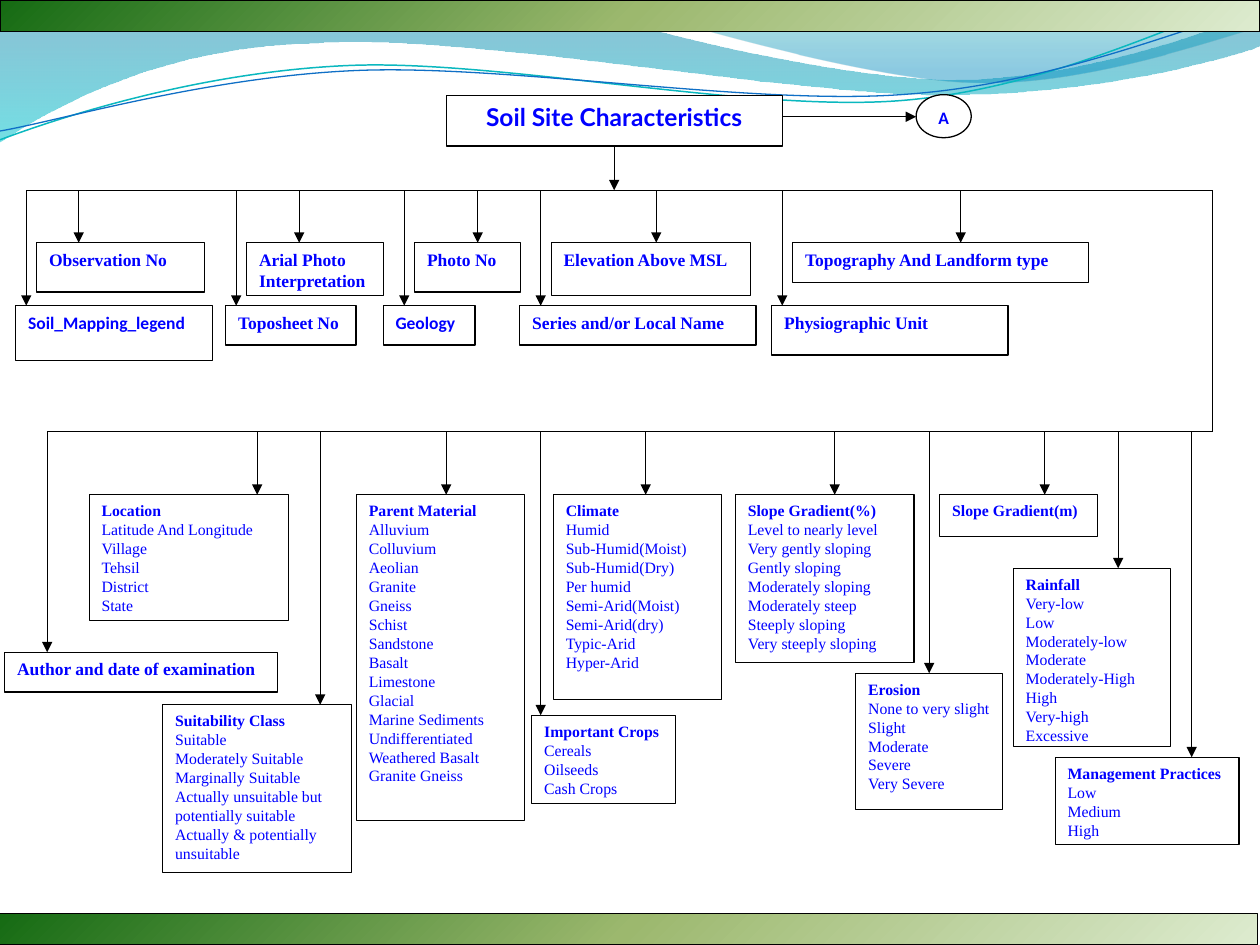
import math
from dataclasses import dataclass

import pptx
import pptx.dml.color
import pptx.enum.shapes
import pptx.enum.text
import pptx.oxml
import pptx.oxml.ns
import pptx.util
from lxml import etree

COLORS = {"text": "0000FF", "line": "000000", "box": "FFFFFF"}
SERIF, SANS = "Times New Roman", "Calibri"
COLUMNS, ROWS = 240, 180
WIDTH, HEIGHT = pptx.util.Inches(10), pptx.util.Inches(7.5)
TOP_OFFSET = pptx.util.Inches(0.01)
UPPER_BUS, LOWER_BUS, BUS_RIGHT = 36, 82, 231
UNITS_PER_INCH = 10000


@dataclass
class Box:
    col: float
    row: float
    cols: float
    rows: float
    arrow_col: float
    text: str
    size: float = 10
    font: str = SERIF


@dataclass
class Wave:
    start: tuple
    segments: list
    stops: list | None = None
    line: str | None = None
    width: float = 0.75
    rotation: float = 0
    center: tuple = (0, 0)


WAVES = [
    Wave((0, 0), [[(4.4, -0.01)],
                  [(4.76, 0.17), (6.64, 0.63), (7.58, 0.63)],
                  [(8.53, 0.63), (9.58, 0.26), (10, 0.09)],
                  [(10.01, 0.36)],
                  [(9.83, 0.44), (8.7, 0.76), (7.46, 0.75)],
                  [(6.22, 0.75), (3.82, 0.28), (2.57, 0.34)],
                  [(1.29, 0.36), (0.46, 0.83), (-0.01, 1.13)],
                  [(0, 0)]],
         [(0, "0074A1", 45), (100, "00C6CF", 55)]),
    Wave((4.79, -0.01), [[(5.09, 0.11), (6.82, 0.62), (7.69, 0.65)],
                         [(8.56, 0.69), (9.61, 0.32), (10, 0.21)],
                         [(10, 0)], [(4.79, -0.01)]],
         [(0, "00A1A9", 30), (80, "008BBF", 45)]),
    Wave((0, 1.11), [[(0.48, 0.93), (1.58, 0.57), (2.77, 0.52)],
                     [(3.95, 0.47), (5.93, 0.89), (7.13, 0.8)],
                     [(8.33, 0.71), (9.38, 0.15), (9.98, -0.02)]],
         line="0AB8BF", width=0.85, rotation=357.3, center=(4.99, 0.58)),
    Wave((0, 1.04), [[(0.47, 0.96), (1.64, 0.61), (2.83, 0.56)],
                     [(4.03, 0.51), (5.97, 0.84), (7.17, 0.75)],
                     [(8.36, 0.67), (9.41, 0.21), (10, 0.06)]],
         line="0F6FC6", rotation=357.3, center=(5, 0.59)),
]

BOXES = [
    Box(7, 46, 32, 9.4, 15, "Observation No"),
    Box(47, 46, 26, 10, 57, "Arial Photo Interpretation"),
    Box(79, 46, 20.2, 9.4, 91, "Photo No"),
    Box(105, 46, 38, 10, 125, "Elevation Above MSL"),
    Box(151, 46, 56.4, 7.6, 183, "Topography And Landform type"),
    Box(3, 58, 37.5, 10.4, 5, "Soil_Mapping_legend", font=SANS),
    Box(43, 58, 24.8, 7.5, 45, "Toposheet No"),
    Box(73, 58, 17.5, 7.5, 77, "Geology", font=SANS),
    Box(99, 58, 45, 7.5, 103, "Series and/or Local Name"),
    Box(147, 58, 45, 9.4, 149, "Physiographic Unit"),
    Box(0.9, 124, 52, 7.6, 9, "Author and date of examination"),
    Box(17, 94, 38, 24, 49,
        "Location\nLatitude And Longitude\nVillage\nTehsil\nDistrict\nState", 9),
    Box(31, 134, 36, 32, 61,
        "Suitability Class\nSuitable\nModerately Suitable\nMarginally Suitable\n"
        "Actually unsuitable but potentially suitable\n"
        "Actually & potentially unsuitable", 9),
    Box(67.9, 94, 32, 62, 85,
        "Parent Material\nAlluvium\nColluvium\nAeolian\nGranite\nGneiss\nSchist\n"
        "Sandstone\nBasalt\nLimestone\nGlacial\nMarine Sediments\n"
        "Undifferentiated\nWeathered Basalt\nGranite Gneiss", 9),
    Box(105.4, 94, 32, 39, 123,
        "Climate\nHumid\nSub-Humid(Moist)\nSub-Humid(Dry)\nPer humid\n"
        "Semi-Arid(Moist)\nSemi-Arid(dry)\nTypic-Arid\nHyper-Arid", 9),
    Box(101.3, 136, 27.4, 16.8, 103,
        "Important Crops\nCereals\nOilseeds\nCash Crops", 9),
    Box(140.1, 94, 34, 32, 159,
        "Slope Gradient(%)\nLevel to nearly level\nVery gently sloping\n"
        "Gently sloping\nModerately sloping\nModerately steep\n"
        "Steeply sloping\nVery steeply sloping", 9),
    Box(163, 128, 28, 26, 177,
        "Erosion\nNone to very slight\nSlight\nModerate\nSevere\nVery Severe", 9),
    Box(179, 94, 30, 8, 199, "Slope Gradient(m)", 9),
    Box(193, 108, 30, 34, 213,
        "Rainfall\nVery-low\nLow\nModerately-low\nModerate\nModerately-High\n"
        "High\nVery-high\nExcessive", 9),
    Box(201, 144, 35, 16.6, 227, "Management Practices\nLow\nMedium\nHigh", 9),
]


def rgb(value: str) -> pptx.dml.color.RGBColor:
    return pptx.dml.color.RGBColor.from_string(value)


def x(col: float) -> int:
    return round(WIDTH * col / COLUMNS)


def y(row: float) -> int:
    return round(HEIGHT * row / ROWS) + TOP_OFFSET


def set_line(sp, color: str = COLORS["line"], width: float = 0.75) -> None:
    sp.line.color.rgb = rgb(color)
    sp.line.width = pptx.util.Pt(width)


def set_gradient(sp, stops: list, direction: str) -> None:
    gs = "".join(
        f'<a:gs pos="{pos * 1000}"><a:srgbClr val="{color}">'
        f'<a:alpha val="{alpha * 1000}"/></a:srgbClr></a:gs>'
        for pos, color, alpha in stops)
    grad = pptx.oxml.parse_xml(
        f'<a:gradFill {pptx.oxml.ns.nsdecls("a")} rotWithShape="1">'
        f'<a:gsLst>{gs}</a:gsLst>{direction}</a:gradFill>')
    geom = next(sp._element.spPr.iter(pptx.oxml.ns.qn("a:custGeom"), pptx.oxml.ns.qn("a:prstGeom")))
    geom.addnext(grad)


def draw_wave(s, wave: Wave) -> None:
    angle = math.radians(-wave.rotation)
    cx, cy = wave.center

    def level(point: tuple) -> tuple:
        dx, dy = point[0] - cx, point[1] - cy
        return (round((cx + dx * math.cos(angle) - dy * math.sin(angle)) * UNITS_PER_INCH),
                round((cy + dx * math.sin(angle) + dy * math.cos(angle)) * UNITS_PER_INCH))

    builder = s.shapes.build_freeform(*level(wave.start), scale=pptx.util.Inches(1) / UNITS_PER_INCH)
    builder.add_line_segments([level(p) for seg in wave.segments for p in seg],
                              close=wave.stops is not None)
    sp = builder.convert_to_shape()
    sp.rotation = wave.rotation
    sp.shadow.inherit = False
    steps = iter(list(sp._element.iter(pptx.oxml.ns.qn("a:lnTo"))))
    for seg in wave.segments:
        first, *others = [next(steps) for _ in seg]
        if others:
            curve = etree.Element(pptx.oxml.ns.qn("a:cubicBezTo"))
            first.addprevious(curve)
            for step in (first, *others):
                curve.append(step[0])
                step.getparent().remove(step)
    if wave.stops:
        set_gradient(sp, wave.stops, '<a:lin ang="5400000" scaled="1"/>')
        sp.line.fill.background()
    else:
        sp.fill.background()
        set_line(sp, wave.line, wave.width)


def draw_line(s, start: tuple, end: tuple, arrow: bool = True):
    c = s.shapes.add_connector(pptx.enum.shapes.MSO_CONNECTOR.STRAIGHT,
                               x(start[0]), y(start[1]), x(end[0]), y(end[1]))
    set_line(c)
    if arrow:
        etree.SubElement(c.line._get_or_add_ln(), pptx.oxml.ns.qn("a:tailEnd"), type="triangle")
    etree.SubElement(c._element.spPr, pptx.oxml.ns.qn("a:effectLst"))
    return c


def format_box(sp, box: Box, align=pptx.enum.text.PP_ALIGN.LEFT) -> None:
    sp.left, sp.top = x(box.col), y(box.row)
    sp.width, sp.height = x(box.cols), y(box.rows) - TOP_OFFSET
    sp.fill.solid()
    sp.fill.fore_color.rgb = rgb(COLORS["box"])
    set_line(sp)
    tf = sp.text_frame
    tf.text = box.text
    tf.word_wrap = True
    tf.auto_size = pptx.enum.text.MSO_AUTO_SIZE.NONE
    tf.vertical_anchor = pptx.enum.text.MSO_ANCHOR.TOP
    for i, p in enumerate(tf.paragraphs):
        p.alignment = align
        p.space_after = pptx.util.Pt(0 if box.size == 9 else 10)
        font = p.runs[0].font
        font.name, font.size, font.bold = box.font, pptx.util.Pt(box.size), i == 0
        font.color.rgb = rgb(COLORS["text"])


def add_shape(s, kind, left: int = 0, top: int = 0, width: int = 1, height: int = 1):
    sp = s.shapes.add_shape(kind, left, top, width, height)
    sp.shadow.inherit = False
    return sp


def main() -> None:
    shape = pptx.enum.shapes.MSO_SHAPE
    center = pptx.enum.text.PP_ALIGN.CENTER
    prs = pptx.Presentation()
    prs.slide_width, prs.slide_height = WIDTH, HEIGHT
    s = prs.slides.add_slide(prs.slide_layouts[5])
    title = s.shapes.title
    for wave in WAVES:
        draw_wave(s, wave)
    s.shapes._spTree.append(title._element)
    format_box(title, Box(85, 18, 64, 9.6, 117, "Soil Site Characteristics", 14, "Lato"), center)
    for box in BOXES:
        format_box(add_shape(s, shape.RECTANGLE), box)
        bus = UPPER_BUS if box.row < LOWER_BUS else LOWER_BUS
        draw_line(s, (box.arrow_col, bus), (box.arrow_col, box.row))
    for left, bus in ((5, UPPER_BUS), (9, LOWER_BUS)):
        draw_line(s, (left, bus), (BUS_RIGHT, bus), arrow=False)
    draw_line(s, (BUS_RIGHT, UPPER_BUS), (BUS_RIGHT, LOWER_BUS), arrow=False)
    draw_line(s, (117, 27.6), (117, UPPER_BUS)).begin_connect(title, 2)
    draw_line(s, (149, 22), (174.5, 22))
    format_box(add_shape(s, shape.OVAL), Box(174.5, 17.8, 10.5, 8.2, 149, "A", font=SANS), center)
    for left, top in ((0, 0), (-0.02, 7.25)):
        band = add_shape(s, shape.RECTANGLE, pptx.util.Inches(left), pptx.util.Inches(top),
                         WIDTH, pptx.util.Inches(0.25))
        set_gradient(band, [(0, "DDEBCF", 100), (50, "9CB86E", 100), (100, "156B13", 100)],
                     '<a:path path="circle"><a:fillToRect l="100000" t="100000"/></a:path>')
        set_line(band)
    prs.save("out.pptx")


if __name__ == "__main__":
    main()
